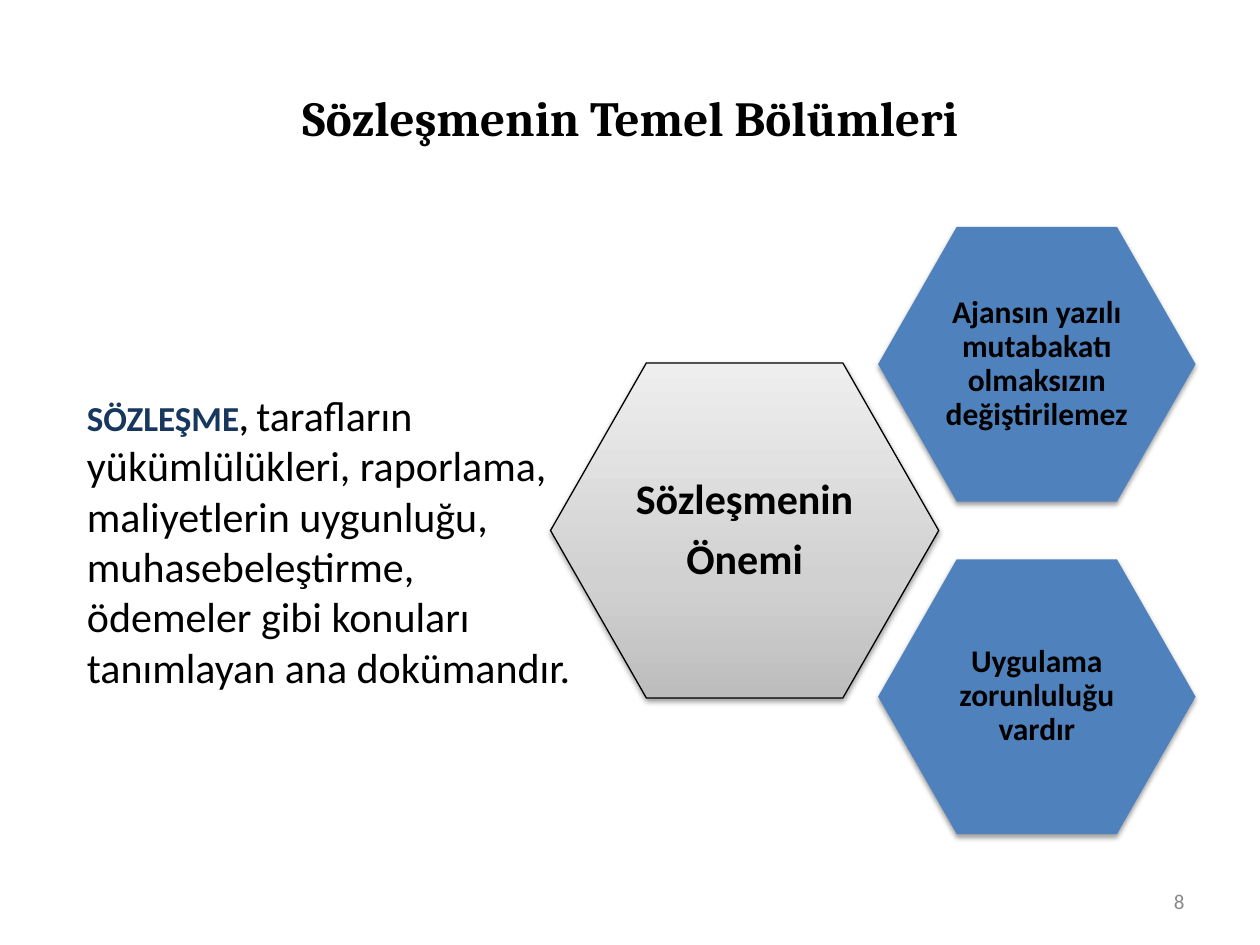
import copy

import pptx
import pptx.util
import pptx.dml.color
import pptx.enum.shapes
import pptx.enum.text
import pptx.oxml
import pptx.oxml.ns

Pt = pptx.util.Pt
RGB = pptx.dml.color.RGBColor
ALIGN = pptx.enum.text.PP_ALIGN
MIDDLE = pptx.enum.text.MSO_ANCHOR.MIDDLE

BLACK = RGB(0x00, 0x00, 0x00)
NAVY = RGB(0x17, 0x37, 0x5E)
BLUE = RGB(0x4F, 0x81, 0xBD)
GRAY = RGB(0x89, 0x89, 0x89)
SHADES = [(0, RGB(0xBD, 0xBD, 0xBD)), (0.35, RGB(0xD1, 0xD1, 0xD1)),
          (1, RGB(0xEE, 0xEE, 0xEE))]

SHADOW = (
    '<a:effectLst %s><a:outerShdw blurRad="%d" dist="%d" dir="5400000" '
    'rotWithShape="0"><a:srgbClr val="000000"><a:alpha val="38000"/>'
    '</a:srgbClr></a:outerShdw></a:effectLst>'
    % (pptx.oxml.ns.nsdecls("a"), Pt(3.1), Pt(1.6)))


def write(para, text, size=24, color=BLACK, bold=False, font="Calibri"):
    """Add one formatted run to a paragraph."""
    run = para.add_run()
    run.text = text
    run.font.name = font
    run.font.size = Pt(size)
    run.font.bold = bold
    run.font.color.rgb = color


def place(shape, left, top, width, height):
    shape.left, shape.top = Pt(left), Pt(top)
    shape.width, shape.height = Pt(width), Pt(height)


def add_title(slide):
    title = slide.shapes.title
    place(title, 36, 21.6, 648, 90)
    frame = title.text_frame
    frame.vertical_anchor = MIDDLE
    para = frame.paragraphs[0]
    para.alignment = ALIGN.CENTER
    write(para, "Sözleşmenin Temel Bölümleri", size=28, bold=True,
          font="Cambria")


def add_body(slide):
    body = slide.placeholders[1]
    place(body, 42.5, 218.9, 300, 189.4)
    para = body.text_frame.paragraphs[0]
    props = para._p.get_or_add_pPr()
    props.set("marL", "0")
    props.set("indent", "0")
    props.append(pptx.oxml.parse_xml(
        "<a:buNone %s/>" % pptx.oxml.ns.nsdecls("a")))
    para.space_before = Pt(0)
    write(para, "SÖZLEŞME", size=20, color=NAVY, bold=True)
    write(para, ", ", size=20, bold=True)
    write(para, "tarafların yükümlülükleri, raporlama, maliyetlerin "
          "uygunluğu, muhasebeleştirme, ödemeler gibi konuları "
          "tanımlayan ana dokümandır.")


def add_hex(slide, box, lines, size):
    """Add a blue, shadowed hexagon with one centred paragraph per line."""
    shape = slide.shapes.add_shape(
        pptx.enum.shapes.MSO_SHAPE.HEXAGON, *map(Pt, box))
    shape.adjustments[0] = 0.286
    shape.fill.solid()
    shape.fill.fore_color.rgb = BLUE
    shape.line.fill.background()
    shape._element.spPr.append(pptx.oxml.parse_xml(SHADOW))

    frame = shape.text_frame
    frame.word_wrap = True
    frame.vertical_anchor = MIDDLE
    frame.margin_left = frame.margin_right = Pt(2)
    frame.margin_top = frame.margin_bottom = Pt(2)
    for i, line in enumerate(lines):
        para = frame.add_paragraph() if i else frame.paragraphs[0]
        para.alignment = ALIGN.CENTER
        para.line_spacing = 0.9
        para.space_after = Pt(0.35 * size)
        write(para, line, size=size, bold=True)
    return shape


def shade(shape):
    """Give the shape a three-stop gray gradient and a thin black edge."""
    fill = shape.fill
    fill.gradient()
    fill.gradient_angle = 90
    first = shape._element.spPr.find(".//" + pptx.oxml.ns.qn("a:gs"))
    first.addnext(copy.deepcopy(first))
    for stop, (spot, color) in zip(fill.gradient_stops, SHADES):
        stop.position = spot
        stop.color.rgb = color
    shape.line.color.rgb = BLACK
    shape.line.width = Pt(0.75)


def add_number(slide):
    box = slide.shapes.add_textbox(Pt(516), Pt(500.5), Pt(168), Pt(28.75))
    frame = box.text_frame
    frame.word_wrap = True
    frame.vertical_anchor = MIDDLE
    para = frame.paragraphs[0]
    para.alignment = ALIGN.RIGHT
    write(para, "8", size=12, color=GRAY)


def main():
    deck = pptx.Presentation()
    deck.slide_width, deck.slide_height = Pt(720), Pt(540)
    slide = deck.slides.add_slide(deck.slide_layouts[1])
    add_title(slide)
    add_body(slide)
    shade(add_hex(slide, (314.6, 207.4, 221.8, 191.5),
                  ["Sözleşmenin", "Önemi"], 24))
    points = ["Ajansın yazılı mutabakatı olmaksızın değiştirilemez",
              "Uygulama zorunluluğu vardır"]
    for i, point in enumerate(points):
        add_hex(slide, (501.8, 129.6 + 190 * i, 181.4, 157), [point], 18)
    add_number(slide)
    deck.save("out.pptx")


if __name__ == "__main__":
    main()
